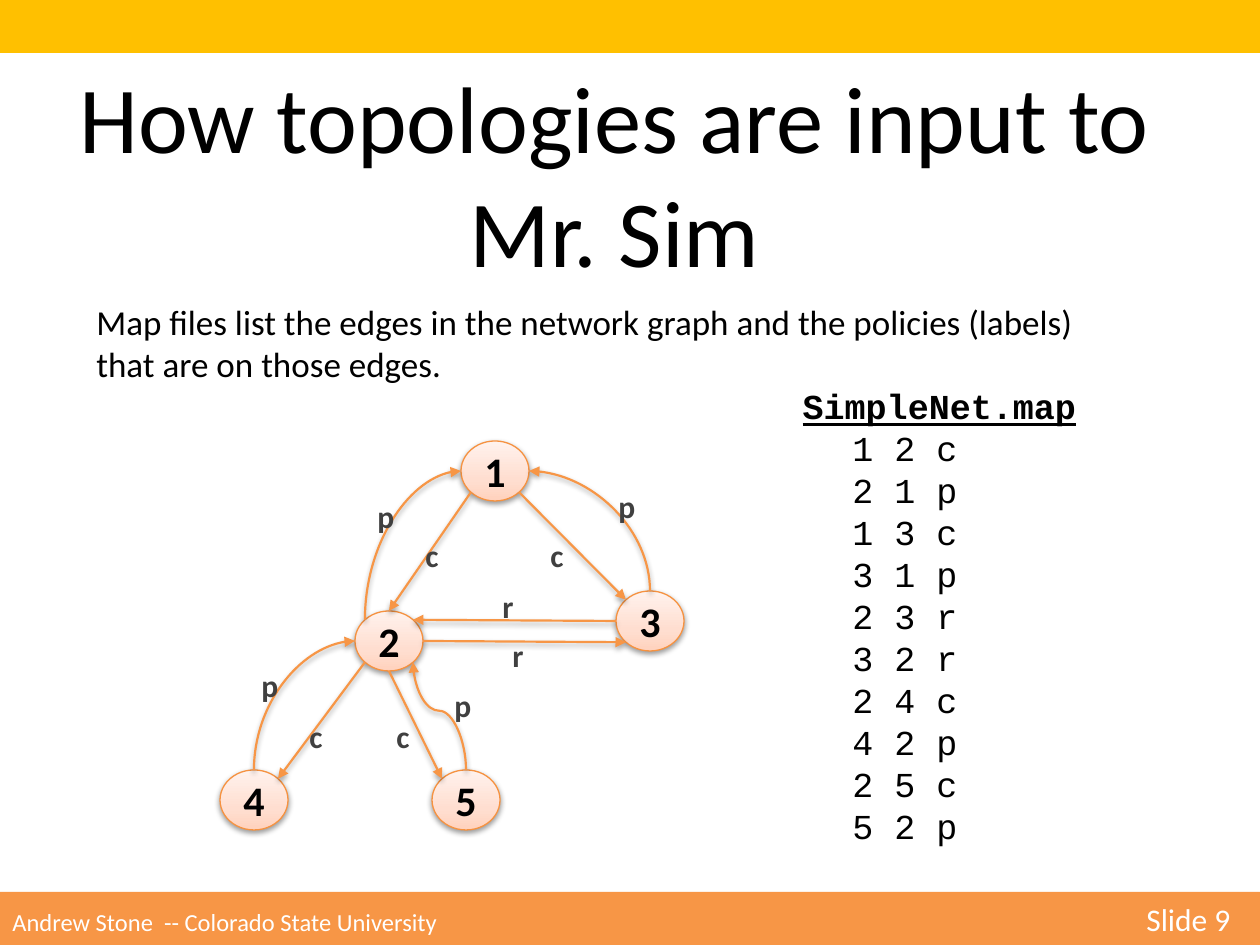
from math import cos, radians, sin

from lxml import etree
from pptx import Presentation
from pptx.dml.color import RGBColor
from pptx.enum.shapes import MSO_CONNECTOR, MSO_SHAPE
from pptx.enum.text import MSO_ANCHOR, PP_ALIGN
from pptx.oxml.ns import qn
from pptx.util import Emu, Pt

EMU_PER_PX = 914400 / 126
TITLE_ONLY = 5
RECT, OVAL = MSO_SHAPE.RECTANGLE, MSO_SHAPE.OVAL
STRAIGHT = MSO_CONNECTOR.STRAIGHT
CENTER, LEFT = PP_ALIGN.CENTER, PP_ALIGN.LEFT
TOP, MIDDLE = MSO_ANCHOR.TOP, MSO_ANCHOR.MIDDLE

BLACK, WHITE, GREY = "000000", "FFFFFF", "404040"
GOLD, ORANGE, NODE_LINE = "FFC000", "F79646", "F69240"
NODE_STOPS = [(0, "FFD2BD"), (35, "FFDED0"), (100, "FFF2ED")]

NODE_W, NODE_H = 68, 60
NODES = {1: (241, 0), 2: (135, 170), 3: (396, 150), 4: (0, 329), 5: (212, 329)}

# Clockwise angle of each attachment point on a node
SITES = {"E": 0, "SE": 45, "S": 90, "SW": 135, "W": 180, "NW": 225, "N": 270, "NE": 315}
ARC, S_CURVE = "curvedConnector2", "curvedConnector3"

# from, site, to, site, curve, label, label position
EDGES = [
    (1, "SW", 2, "N", None, "c", (193, 89)),
    (2, "NW", 1, "W", ARC, "p", (145, 50)),
    (1, "SE", 3, "NW", None, "c", (318, 89)),
    (3, "N", 1, "E", ARC, "p", (386, 40)),
    (2, "E", 3, "SW", None, "r", (280, 189)),
    (3, "W", 2, "NE", None, "r", (270, 140)),
    (2, "SW", 4, "NE", None, "c", (77, 270)),
    (4, "N", 2, "W", ARC, "p", (29, 219)),
    (2, "S", 5, "NW", None, "c", (164, 270)),
    (5, "N", 2, "SE", S_CURVE, "p", (222, 239)),
]


def px(*lengths):
    return [Emu(round(length * EMU_PER_PX)) for length in lengths]


def rgb(value):
    return RGBColor.from_string(value)


def sub(parent, tag, **attributes):
    return etree.SubElement(parent, qn(tag), {k: str(v) for k, v in attributes.items()})


def style(para, size, color=BLACK, bold=False, font="Calibri", align=LEFT):
    para.alignment = align
    para.font.name, para.font.size, para.font.bold = font, Pt(size), bold
    para.font.color.rgb = rgb(color)


def add_text(page, box, text, size, wrap=True, **look):
    frame = page.shapes.add_textbox(*px(*box)).text_frame
    frame.word_wrap = wrap
    para = frame.paragraphs[0]
    para.text = text
    style(para, size, **look)
    return frame


def add_shadow(shape, alpha, distance):
    effects = sub(shape._element.spPr, "a:effectLst")
    shadow = sub(effects, "a:outerShdw", blurRad=40000, dist=distance,
                 dir=5400000, rotWithShape=0)
    color = sub(shadow, "a:srgbClr", val=BLACK)
    sub(color, "a:alpha", val=alpha * 1000)


def add_bar(page, box, color):
    bar = page.shapes.add_shape(RECT, *px(*box))
    bar.shadow.inherit = False
    bar.fill.solid()
    bar.fill.fore_color.rgb = rgb(color)
    bar.line.fill.background()
    return bar


def add_title(page, box, text):
    title = page.shapes.title
    title.left, title.top, title.width, title.height = px(*box)
    frame = title.text_frame
    frame.text = text
    frame.vertical_anchor = TOP
    style(frame.paragraphs[0], 54, align=CENTER)


def add_node(page, left, top, number):
    node = page.shapes.add_shape(OVAL, *px(left, top, NODE_W, NODE_H))
    node.fill.gradient()
    node.fill.gradient_angle = 90
    stops = node._element.spPr.find(qn("a:gradFill")).find(qn("a:gsLst"))
    for stop in list(stops):
        stops.remove(stop)
    for position, color in NODE_STOPS:
        sub(sub(stops, "a:gs", pos=position * 1000), "a:srgbClr", val=color)
    node.line.color.rgb = rgb(NODE_LINE)
    node.line.width = Pt(0.75)
    add_shadow(node, 38, 20000)
    frame = node.text_frame
    frame.vertical_anchor = MIDDLE
    frame.text = str(number)
    style(frame.paragraphs[0], 24, bold=True, align=CENTER)


def site_point(left, top, number, site):
    node_left, node_top = NODES[number]
    angle = radians(SITES[site])
    return (left + node_left + NODE_W / 2 * (1 + cos(angle)),
            top + node_top + NODE_H / 2 * (1 + sin(angle)))


def bend_upward(line, start, end, curve):
    """Turn the line into a curve that leaves its start straight up."""
    (x1, y1), (x2, y2) = start, end
    width, height = abs(y2 - y1), abs(x2 - x1)
    line.left, line.top, line.width, line.height = px(
        (x1 + x2 - width) / 2, (y1 + y2 - height) / 2, width, height)
    frame = line._element.spPr.find(qn("a:xfrm"))
    for flip in ("flipH", "flipV"):
        frame.attrib.pop(flip, None)
    frame.set("flipV", "1")
    if x2 > x1:
        frame.set("flipH", "1")
    frame.set("rot", str((90 if x2 > x1 else 270) * 60000))
    geometry = line._element.spPr.find(qn("a:prstGeom"))
    geometry.set("prst", curve)
    if curve == S_CURVE:
        sub(geometry.find(qn("a:avLst")), "a:gd", name="adj1", fmla="val 54900")


def add_edge(page, start, end, curve):
    line = page.shapes.add_connector(STRAIGHT, *px(*start, *end))
    if curve:
        bend_upward(line, start, end, curve)
    line.line.color.rgb = rgb(ORANGE)
    line.line.width = Pt(1.25)
    sub(line.line._get_or_add_ln(), "a:tailEnd", type="triangle")
    add_shadow(line, 35, 23000)


def add_graph(page, left, top):
    for number, (x, y) in NODES.items():
        add_node(page, left + x, top + y, number)
    for source, leave, target, arrive, curve, label, (x, y) in EDGES:
        add_edge(page, site_point(left, top, source, leave),
                 site_point(left, top, target, arrive), curve)
        add_text(page, (left + x, top + y, 38, 48), label, 18,
                 wrap=False, color=GREY, bold=True)


def add_map_listing(page, box):
    frame = add_text(page, box, "SimpleNet.map", 20, bold=True,
                     font="Courier New", align=CENTER)
    frame.paragraphs[0].font.underline = True
    for source, _, target, _, _, label, _ in EDGES:
        para = frame.add_paragraph()
        para.text = f"{source} {target} {label}"
        style(para, 20, font="Courier New")
        para._p.get_or_add_pPr().set("marL", str(px(63)[0]))


def add_footer(page, box):
    frame = add_bar(page, box, ORANGE).text_frame
    frame.vertical_anchor = MIDDLE
    para = frame.paragraphs[0]
    para.text = "Andrew Stone  -- Colorado State University \t"
    style(para, 14, WHITE)
    span = para.add_run()
    span.text = "Slide 9"
    span.font.size = Pt(18)
    tabs = etree.Element(qn("a:tabLst"))
    sub(tabs, "a:tab", pos=px(1134)[0], algn="l")
    para._p.pPr.find(qn("a:defRPr")).addprevious(tabs)


def main():
    deck = Presentation()
    deck.slide_width, deck.slide_height = px(1260, 945)
    page = deck.slides.add_slide(deck.slide_layouts[TITLE_ONLY])
    add_bar(page, (0, 0, 1260, 53), GOLD)
    add_title(page, (0, 53, 1229, 242), "How topologies are input to Mr. Sim")
    add_text(page, (84, 294, 1018, 97),
             "Map files list the edges in the network graph and the policies "
             "(labels) that are on those edges.", 20)
    add_graph(page, 220, 441)
    add_map_listing(page, (777, 378, 325, 479))
    add_footer(page, (0, 892, 1260, 53))
    deck.save("out.pptx")


if __name__ == "__main__":
    main()
